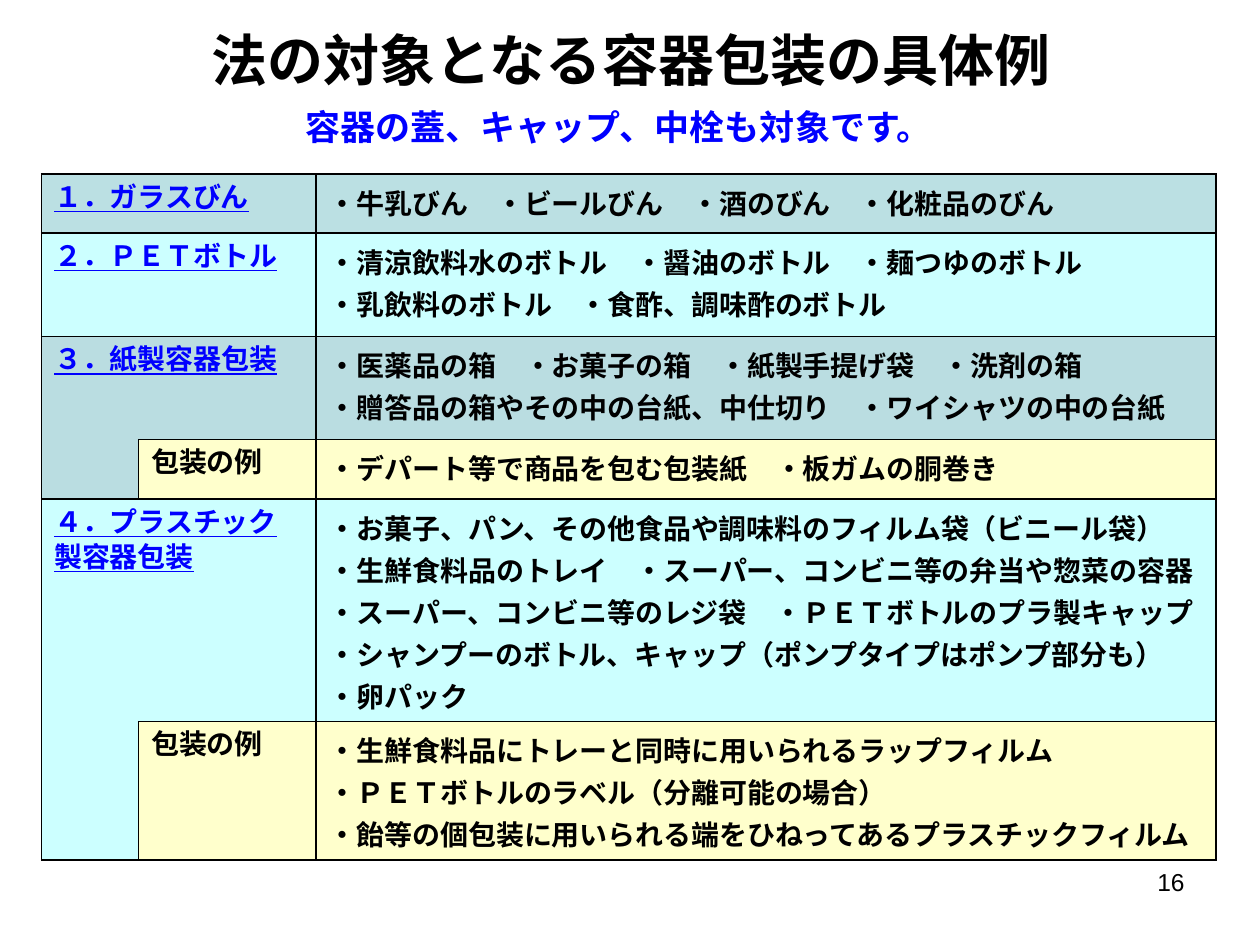
import pptx
import pptx.dml.color
import pptx.enum.text
import pptx.oxml
import pptx.oxml.ns
import pptx.util
from pptx.util import Inches

PP_ALIGN = pptx.enum.text.PP_ALIGN
ANCHOR = pptx.enum.text.MSO_ANCHOR
BLUE, BLACK = "0000FF", "000000"
GREY, GREY2, CYAN, CREAM = "BBE0E3", "BADDE1", "CCFFFF", "FFFFCC"
COLS = [0.77, 1.41, 7.14]
ROWS = [0.47, 0.82, 0.82, 0.47, 1.76, 1.1]
EXAMPLE = "包装の例"
ITEMS = [
    ("１．ガラスびん", GREY, ["・牛乳びん　・ビールびん　・酒のびん　・化粧品のびん"]),
    ("２．ＰＥＴボトル", CYAN, [
        "・清涼飲料水のボトル　・醤油のボトル　・麺つゆのボトル",
        "・乳飲料のボトル　・食酢、調味酢のボトル"]),
    ("３．紙製容器包装", GREY2, [
        "・医薬品の箱　・お菓子の箱　・紙製手提げ袋　・洗剤の箱",
        "・贈答品の箱やその中の台紙、中仕切り　・ワイシャツの中の台紙"]),
    (EXAMPLE, GREY2, ["・デパート等で商品を包む包装紙　・板ガムの胴巻き"]),
    ("４．プラスチック製容器包装", CYAN, [
        "・お菓子、パン、その他食品や調味料のフィルム袋（ビニール袋）",
        "・生鮮食料品のトレイ　・スーパー、コンビニ等の弁当や惣菜の容器",
        "・スーパー、コンビニ等のレジ袋　・ＰＥＴボトルのプラ製キャップ",
        "・シャンプーのボトル、キャップ（ポンプタイプはポンプ部分も）",
        "・卵パック"]),
    (EXAMPLE, CYAN, [
        "・生鮮食料品にトレーと同時に用いられるラップフィルム",
        "・ＰＥＴボトルのラベル（分離可能の場合）",
        "・飴等の個包装に用いられる端をひねってあるプラスチックフィルム"]),
]


def rgb(value):
    return pptx.dml.color.RGBColor.from_string(value)


def put_text(tf, lines, size=16, color=BLACK, font="Noto Sans CJK JP", bold=True,
             underline=False, align=PP_ALIGN.LEFT, spacing=None):
    tf.word_wrap = True
    for i, line in enumerate(lines):
        p = tf.add_paragraph() if i else tf.paragraphs[0]
        p.alignment = align
        if spacing:
            p.line_spacing = pptx.util.Pt(spacing)
        r = p.add_run()
        r.text = line
        f = r.font
        f.size, f.name, f.bold, f.underline = pptx.util.Pt(size), font, bold, underline
        f.color.rgb = rgb(color)
        ea = pptx.oxml.parse_xml(f'<a:ea {pptx.oxml.ns.nsdecls("a")} typeface="{font}"/>')
        r._r.get_or_add_rPr().append(ea)


def style_cell(cell, fill, open_sides=""):
    cell.fill.solid()
    cell.fill.fore_color.rgb = rgb(fill)
    for i, side in enumerate("LRTB"):
        paint = ("<a:noFill/>" if side in open_sides
                 else f'<a:solidFill><a:srgbClr val="{BLACK}"/></a:solidFill>')
        ln = pptx.oxml.parse_xml(
            f'<a:ln{side} {pptx.oxml.ns.nsdecls("a")} w="12700">{paint}</a:ln{side}>')
        cell._tc.get_or_add_tcPr().insert(i, ln)


class Deck:
    """Hold the presentation, its style and the current slide."""

    def __init__(self):
        self.prs = pptx.Presentation()
        self.prs.slide_width, self.prs.slide_height = Inches(10), Inches(7.5)
        self.s = self.prs.slides.add_slide(self.prs.slide_layouts[5])

    def title(self, text, x, y, w, h, **fmt):
        sp = self.s.shapes.title
        sp.left, sp.top, sp.width, sp.height = map(Inches, (x, y, w, h))
        sp.text_frame.vertical_anchor = ANCHOR.MIDDLE
        put_text(sp.text_frame, [text], **fmt)

    def text(self, text, x, y, w, h, **fmt):
        sp = self.s.shapes.add_textbox(*map(Inches, (x, y, w, h)))
        put_text(sp.text_frame, [text], **fmt)

    def table(self, items, x, y):
        frame = self.s.shapes.add_table(len(ROWS), len(COLS), Inches(x), Inches(y),
                                        Inches(sum(COLS)), Inches(sum(ROWS)))
        tbl = frame.table
        tbl.first_row = tbl.horz_banding = False
        for col, w in zip(tbl.columns, COLS):
            col.width = Inches(w)
        for row, h in zip(tbl.rows, ROWS):
            row.height = Inches(h)
        for i, (label, fill, lines) in enumerate(items):
            head, sub, body = (tbl.cell(i, j) for j in range(3))
            if label == EXAMPLE:
                style_cell(head, fill, "T")
                style_cell(sub, CREAM)
                style_cell(body, CREAM)
                put_text(sub.text_frame, [label], spacing=20)
            else:
                head.merge(sub)
                split = i + 1 < len(items) and items[i + 1][0] == EXAMPLE
                style_cell(head, fill, "B" if split else "")
                style_cell(sub, fill, "L")
                style_cell(body, fill)
                put_text(head.text_frame, [label], color=BLUE, underline=True, spacing=20)
            put_text(body.text_frame, lines, spacing=24)


def main():
    deck = Deck()
    deck.title("法の対象となる容器包装の具体例", 0.51, 0.13, 9, 0.68,
               size=32, align=PP_ALIGN.CENTER)
    deck.text("16", 7.17, 6.83, 2.33, 0.52, size=14, font="Arial", bold=False,
              align=PP_ALIGN.RIGHT)
    deck.text("容器の蓋、キャップ、中栓も対象です。", 0.38, 0.79, 9.06, 0.44,
              size=20, color=BLUE, align=PP_ALIGN.CENTER)
    deck.table(ITEMS, 0.33, 1.38)
    deck.prs.save("out.pptx")


if __name__ == "__main__":
    main()
